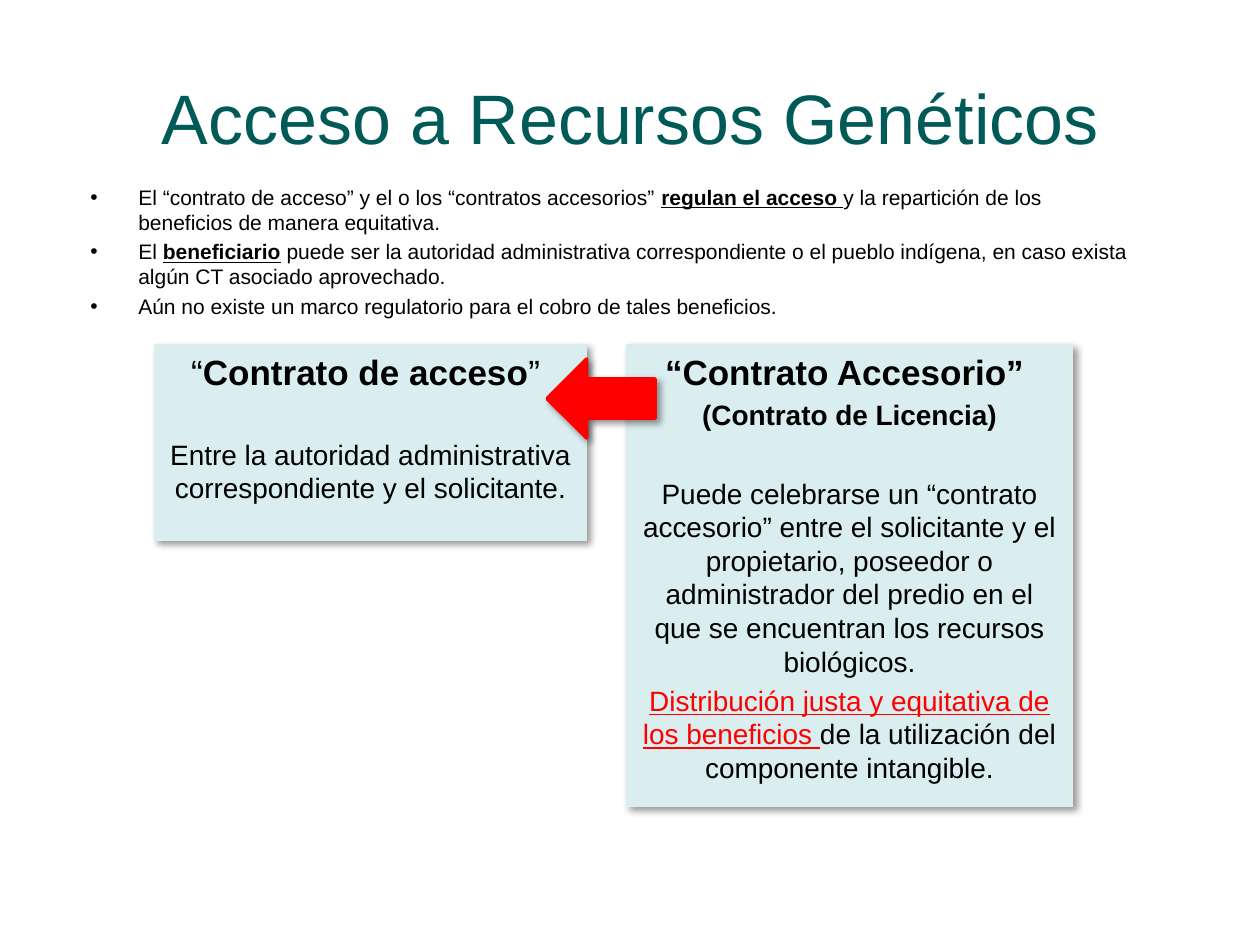
from lxml import etree
from pptx import Presentation
from pptx.dml.color import RGBColor
from pptx.enum.shapes import MSO_SHAPE
from pptx.enum.text import MSO_ANCHOR, PP_ALIGN
from pptx.oxml.ns import qn
from pptx.util import Emu, Pt

RECTANGLE = MSO_SHAPE.RECTANGLE
RIGHT_ARROW = MSO_SHAPE.RIGHT_ARROW
TOP, MIDDLE = MSO_ANCHOR.TOP, MSO_ANCHOR.MIDDLE
LEFT, CENTER = PP_ALIGN.LEFT, PP_ALIGN.CENTER
TITLE_ONLY = 5

PX_PER_INCH = 126
EMU_PER_INCH = 914400


def px(length):
    return Emu(round(length * EMU_PER_INCH / PX_PER_INCH))


def color(value):
    return RGBColor.from_string(value)


class SlideBuilder:
    font = "Arial"
    ink = "000000"
    teal = "005A58"
    panel_fill = "DAEDEF"
    red = "FF0000"

    def __init__(self, deck):
        self.slide = deck.slides.add_slide(deck.slide_layouts[TITLE_ONLY])

    def add_span(self, para, text, size, bold=False, underline=False, ink=None):
        span = para.add_run()
        span.text = text
        span.font.name = self.font
        span.font.size = Pt(size)
        span.font.bold = bold
        span.font.underline = underline
        span.font.color.rgb = color(ink or self.ink)

    def fill_text(self, frame, paragraphs, align, anchor=TOP, bullet=False):
        frame.word_wrap = True
        frame.vertical_anchor = anchor
        for index, (size, space, spans) in enumerate(paragraphs):
            para = frame.add_paragraph() if index else frame.paragraphs[0]
            para.alignment = align
            para.space_before = Pt(space if index else 0)
            if bullet:
                self.add_bullet(para)
            for text, style in spans:
                self.add_span(para, text, size, **style)

    def add_bullet(self, para):
        properties = para._p.get_or_add_pPr()
        indent = px(48)
        properties.set("marL", str(indent))
        properties.set("indent", str(-indent))
        etree.SubElement(properties, qn("a:buFont"), typeface=self.font)
        etree.SubElement(properties, qn("a:buChar"), char="•")

    def add_shadow(self, shape):
        shape.shadow.inherit = False
        effects = shape._element.spPr.find(qn("a:effectLst"))
        shadow = etree.SubElement(
            effects, qn("a:outerShdw"), blurRad=str(Pt(4)), dist=str(Pt(3)),
            dir=str(45 * 60000), algn="tl", rotWithShape="0")
        shade = etree.SubElement(shadow, qn("a:srgbClr"), val=self.ink)
        etree.SubElement(shade, qn("a:alpha"), val="40000")

    def add_shape(self, kind, bounds, fill):
        shape = self.slide.shapes.add_shape(kind, *map(px, bounds))
        shape.fill.solid()
        shape.fill.fore_color.rgb = color(fill)
        shape.line.fill.background()
        self.add_shadow(shape)
        return shape

    def title(self, bounds, text):
        box = self.slide.shapes.title
        box.left, box.top, box.width, box.height = map(px, bounds)
        self.fill_text(box.text_frame, [(40, 0, [(text, {"ink": self.teal})])], CENTER, MIDDLE)

    def panel(self, bounds, paragraphs):
        box = self.add_shape(RECTANGLE, bounds, self.panel_fill)
        self.fill_text(box.text_frame, paragraphs, CENTER)

    def bullets(self, bounds, items):
        box = self.slide.shapes.add_textbox(*map(px, bounds))
        paragraphs = [(12, 2.4, spans) for spans in items]
        self.fill_text(box.text_frame, paragraphs, LEFT, bullet=True)

    def left_pointing_arrow(self, bounds):
        arrow = self.add_shape(RIGHT_ARROW, bounds, self.red)
        arrow.rotation = 180
        arrow.line.color.rgb = color(self.red)
        arrow.line.width = Pt(2)


def main():
    deck = Presentation()
    deck.slide_width, deck.slide_height = px(1260), px(945)
    builder = SlideBuilder(deck)
    plain, bold = {}, {"bold": True}
    key_term = {"bold": True, "underline": True}
    red_link = {"underline": True, "ink": builder.red}
    close, section = 3.2, 25.6

    builder.title((63, 29, 1134, 174), "Acceso a Recursos Genéticos")
    builder.panel((154, 344, 433, 197), [
        (20, 0, [("“", plain), ("Contrato de acceso", bold), ("” ", plain)]),
        (16, section, [("Entre la autoridad administrativa correspondiente y el solicitante.", plain)]),
    ])
    builder.panel((626, 344, 447, 463), [
        (20, 0, [("“Contrato Accesorio” ", bold)]),
        (16, close, [("(Contrato de Licencia)", bold)]),
        (16, section, [("Puede celebrarse un “contrato accesorio” entre el solicitante y el "
                        "propietario, poseedor o administrador del predio en el que se "
                        "encuentran los recursos biológicos.", plain)]),
        (16, close, [("Distribución justa y equitativa de los beneficios ", red_link),
                     ("de la utilización del componente intangible.", plain)]),
    ])
    builder.bullets((78, 178, 1074, 159), [
        [("El “contrato de acceso” y el o los “contratos accesorios” ", plain),
         ("regulan el acceso ", key_term),
         ("y la repartición de los beneficios de manera equitativa.", plain)],
        [("El ", plain), ("beneficiario", key_term),
         (" puede ser la autoridad administrativa correspondiente o el pueblo indígena, "
          "en caso exista algún CT asociado aprovechado.", plain)],
        [("Aún no existe un marco regulatorio para el cobro de tales beneficios.", plain)],
    ])
    builder.left_pointing_arrow((547, 359, 108, 79))
    deck.save("out.pptx")


if __name__ == "__main__":
    main()
